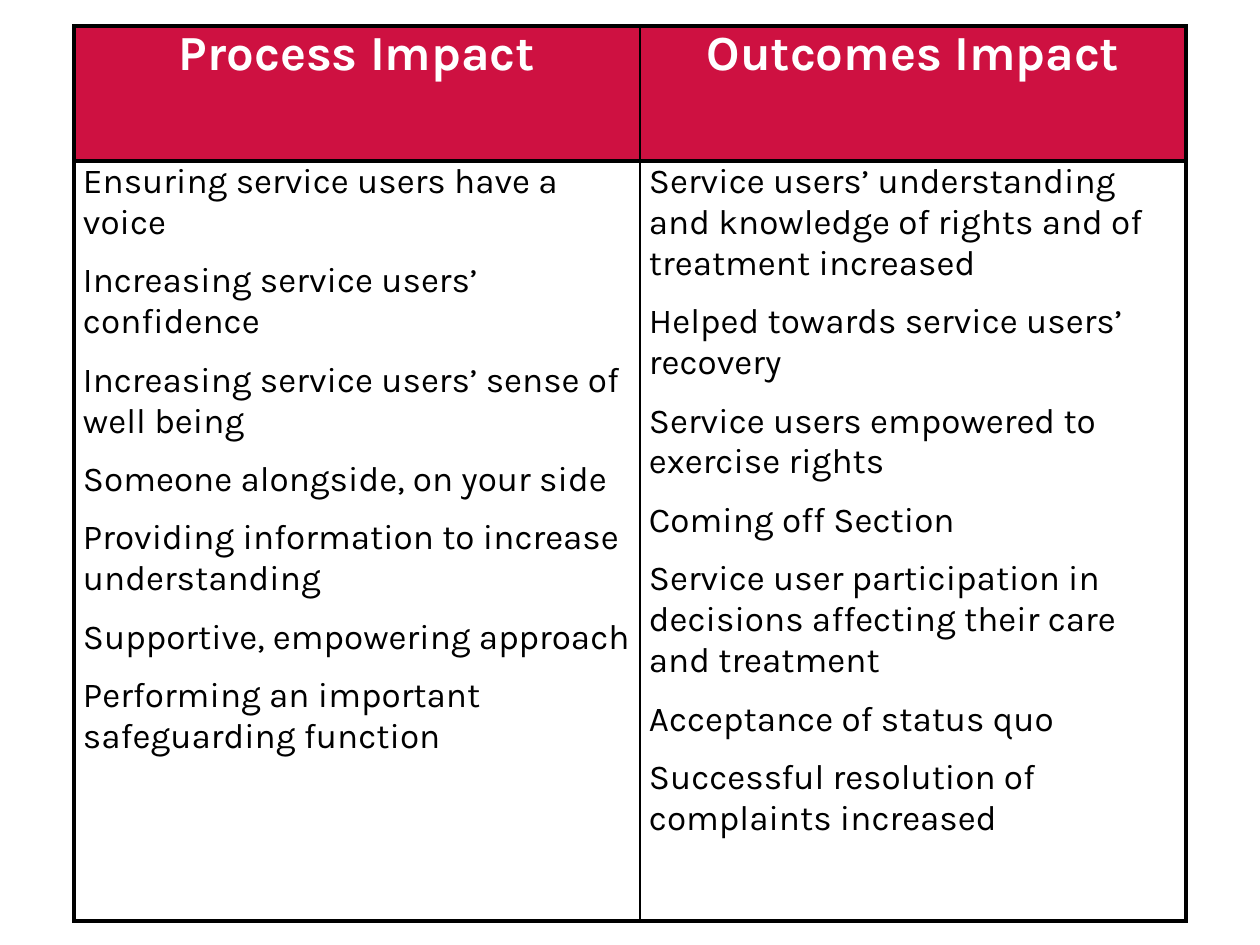
from dataclasses import dataclass

from lxml import etree
from pptx import Presentation
from pptx.dml.color import RGBColor
from pptx.enum.text import PP_ALIGN
from pptx.oxml.ns import qn
from pptx.slide import Slide
from pptx.util import Pt

PX = 914400 / 126
LEFT, CENTER = PP_ALIGN.LEFT, PP_ALIGN.CENTER
COLORS = {"header": "CE1141", "header_text": "FFFFFF", "text": "000000", "border": "000000"}
THICK, THIN = 2.25, 1

COLUMNS = {
    "Process Impact": [
        "Ensuring service users have a voice",
        "Increasing service users’ confidence",
        "Increasing service users’ sense of well being",
        "Someone alongside, on your side",
        "Providing information to increase understanding",
        "Supportive, empowering approach",
        "Performing an important safeguarding function",
    ],
    "Outcomes Impact": [
        "Service users’ understanding and knowledge of rights and of treatment increased",
        "Helped towards service users’ recovery",
        "Service users empowered to exercise rights",
        "Coming off Section",
        "Service user participation in decisions affecting their care and treatment",
        "Acceptance of status quo",
        "Successful resolution of complaints increased",
    ],
}


def px(length):
    return round(length * PX)


@dataclass
class ImpactSlide:
    slide: Slide
    font: str = "Karla"

    def table(self, left, top, widths, heights):
        frame = self.slide.shapes.add_table(
            len(heights), len(widths), px(left), px(top), px(sum(widths)), px(sum(heights))
        )
        table = frame.table
        table.first_row = table.horz_banding = False
        for column, width in zip(table.columns, widths):
            column.width = px(width)
        for row, height in zip(table.rows, heights):
            row.height = px(height)
        return table

    def borders(self, cell, **widths):
        properties = cell._tc.get_or_add_tcPr()
        for side, width in widths.items():
            line = etree.SubElement(properties, qn(f"a:ln{side}"), w=str(Pt(width)))
            fill = etree.SubElement(line, qn("a:solidFill"))
            etree.SubElement(fill, qn("a:srgbClr"), val=COLORS["border"])

    def cell(self, cell, lines, size, color, bold=False, align=LEFT, fill=None):
        cell.margin_left = cell.margin_right = px(9)
        cell.margin_top = cell.margin_bottom = 0
        if fill:
            cell.fill.solid()
            cell.fill.fore_color.rgb = RGBColor.from_string(COLORS[fill])
        else:
            cell.fill.background()
        cell.text = "\n".join(lines)
        for paragraph in cell.text_frame.paragraphs:
            paragraph.alignment = align
            paragraph.space_before = Pt(10)
            font = paragraph.font
            font.name, font.size, font.bold = self.font, Pt(size), bold
            font.color.rgb = RGBColor.from_string(COLORS[color])


def main():
    presentation = Presentation()
    presentation.slide_width, presentation.slide_height = px(1260), px(945)
    slide = presentation.slides.add_slide(presentation.slide_layouts[6])
    impact = ImpactSlide(slide)
    table = impact.table(74, 26, [566, 546], [135, 760])
    last = len(COLUMNS) - 1
    for index, (heading, points) in enumerate(COLUMNS.items()):
        header, body = table.cell(0, index), table.cell(1, index)
        for cell in (header, body):
            impact.borders(
                cell,
                L=THIN if index else THICK,
                R=THIN if index < last else THICK,
                T=THICK,
                B=THICK,
            )
        impact.cell(header, [heading], 28, "header_text", True, CENTER, "header")
        impact.cell(body, points, 20, "text")
    presentation.save("out.pptx")


if __name__ == "__main__":
    main()
